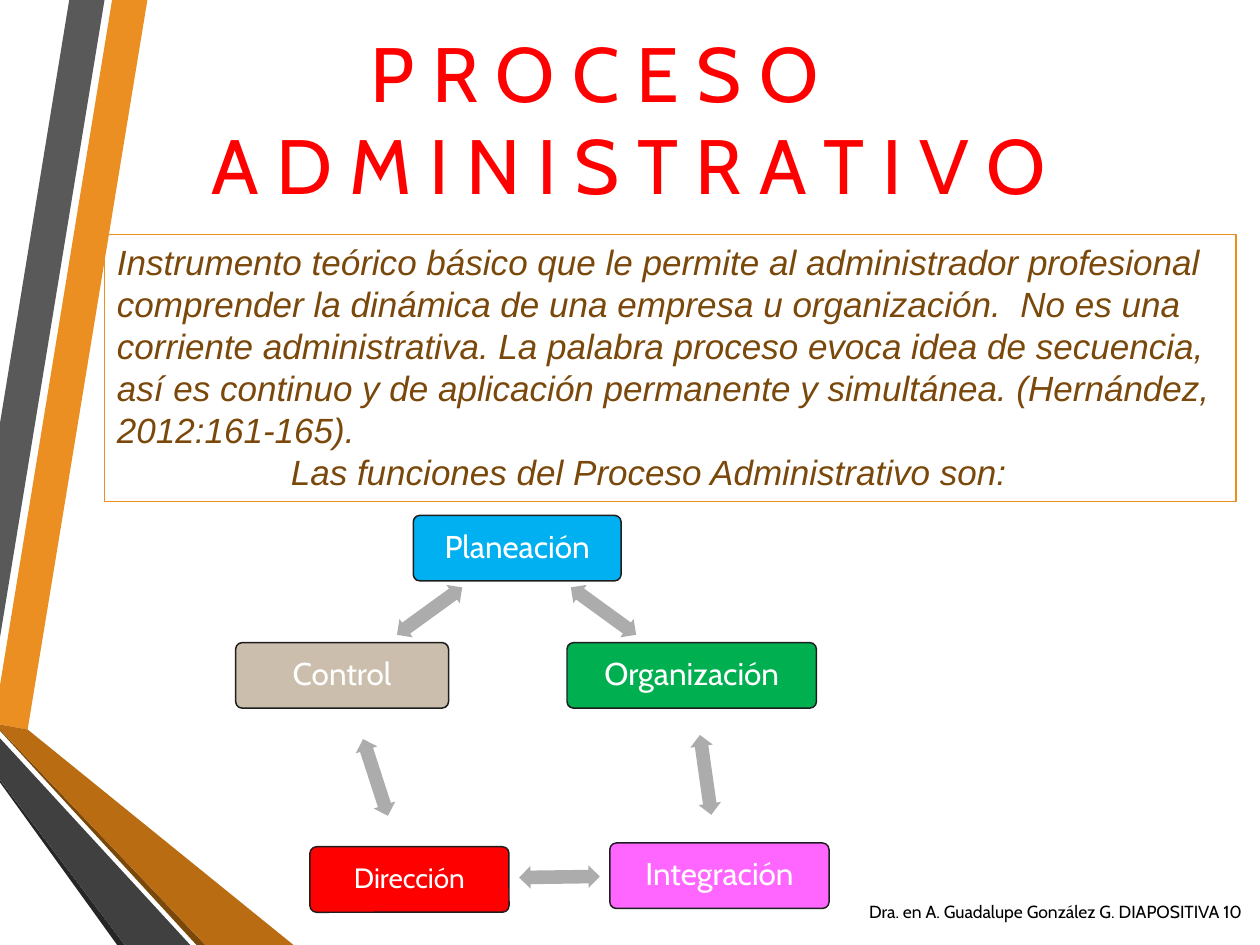
from dataclasses import dataclass

import pptx
import pptx.dml.color
import pptx.enum.shapes
import pptx.enum.text
import pptx.util

Inches = pptx.util.Inches
Pt = pptx.util.Pt
Shape = pptx.enum.shapes.MSO_SHAPE
Align = pptx.enum.text.PP_ALIGN
Anchor = pptx.enum.text.MSO_ANCHOR


@dataclass(frozen=True)
class Theme:
    heading_font: str = "Cabin"
    body_font: str = "Arial"
    title_size: int = 44
    body_size: int = 20
    node_size: int = 18
    small_node_size: int = 16
    footer_size: int = 10
    title: str = "FF0000"
    body: str = "7B480B"
    node_text: str = "FFFFFF"
    footer: str = "000000"
    orange: str = "EB8F22"
    dark_orange: str = "B96C11"
    brown: str = "7B480B"
    gray: str = "595959"
    dark_gray: str = "404040"
    near_black: str = "262626"
    outline: str = "1E1E1E"
    arrow: str = "ACACAC"
    planning: str = "00B0F0"
    organizing: str = "00B050"
    integrating: str = "FF66FF"
    directing: str = "FF0000"
    controlling: str = "CBBEAC"


def rgb(value):
    return pptx.dml.color.RGBColor.from_string(value)


def write(frame, lines, *, font, size, color, italic=False, align=Align.LEFT,
          anchor=Anchor.TOP, indents=(), spacing=None):
    """Fill a text frame, one paragraph a line; indents are left margins in inches."""
    frame.word_wrap = True
    frame.vertical_anchor = anchor
    for index, line in enumerate(lines):
        para = frame.add_paragraph() if index else frame.paragraphs[0]
        para.alignment = align
        if spacing:
            para.line_spacing = spacing
        if indents and indents[index]:
            para._p.get_or_add_pPr().set("marL", str(Inches(indents[index])))
        span = para.add_run()
        span.text = line
        span.font.name = font
        span.font.size = Pt(size)
        span.font.italic = italic
        span.font.color.rgb = rgb(color)


class SlideBuilder:
    def __init__(self, page, theme):
        self.page = page
        self.theme = theme

    def paint(self, shape, fill=None, line=None, width=0.75):
        shape.shadow.inherit = False
        if fill:
            shape.fill.solid()
            shape.fill.fore_color.rgb = rgb(fill)
        else:
            shape.fill.background()
        if line:
            shape.line.color.rgb = rgb(line)
            shape.line.width = Pt(width)
        else:
            shape.line.fill.background()

    def shape(self, kind, bounds, **paint):
        shape = self.page.shapes.add_shape(kind, *map(Inches, bounds))
        self.paint(shape, **paint)
        return shape

    def band(self, points, fill):
        start, *rest = [(Inches(x), Inches(y)) for x, y in points]
        builder = self.page.shapes.build_freeform(*start)
        builder.add_line_segments(rest, close=True)
        self.paint(builder.convert_to_shape(), fill=fill)

    def text(self, bounds, lines, **style):
        box = self.page.shapes.add_textbox(*map(Inches, bounds))
        write(box.text_frame, lines, **style)

    def panel(self, bounds, lines, **style):
        panel = self.shape(Shape.RECTANGLE, bounds, line=self.theme.orange)
        write(panel.text_frame, lines, **style)

    def node(self, label, left, top, width, fill, size):
        node = self.shape(Shape.ROUNDED_RECTANGLE, (left, top, width, 0.52),
                          fill=fill, line=self.theme.outline, width=0.85)
        node.adjustments[0] = 0.1
        frame = node.text_frame
        frame.margin_left = frame.margin_right = Inches(0.07)
        frame.margin_top = frame.margin_bottom = Inches(0.07)
        write(frame, [label], font=self.theme.heading_font, size=size,
              color=self.theme.node_text, align=Align.CENTER,
              anchor=Anchor.MIDDLE, spacing=0.9)

    def double_arrow(self, left, top, angle):
        arrow = self.shape(Shape.LEFT_RIGHT_ARROW, (left, top, 0.64, 0.18),
                           fill=self.theme.arrow)
        arrow.adjustments[0] = 0.6
        arrow.adjustments[1] = 0.5
        arrow.rotation = angle


def main():
    deck = pptx.Presentation()
    deck.slide_width, deck.slide_height = Inches(10), Inches(7.5)
    theme = Theme()
    slide = SlideBuilder(deck.slides.add_slide(deck.slide_layouts[6]), theme)

    bands = [
        (theme.orange, [(0, 5.44), (0, 5.75), (0.22, 5.79), (1.17, 0), (0.89, 0)]),
        (theme.gray, [(0.83, 0), (0.55, 0), (0, 3.36), (0, 5.06)]),
        (theme.near_black, [(0, 6.19), (0, 6.21), (0.93, 7.5), (0.99, 7.5)]),
        (theme.brown, [(0, 5.79), (0, 5.8), (1.56, 7.5), (1.63, 7.5)]),
        (theme.dark_orange, [(0, 5.79), (1.63, 7.5), (2.33, 7.5), (0.22, 5.79), (0, 5.75)]),
        (theme.dark_gray, [(0, 6.19), (0.99, 7.5), (1.51, 7.5), (0, 5.86)]),
    ]
    for fill, points in bands:
        slide.band(points, fill)

    slide.text((0.28, 0.21, 8.88, 1.45),
               ["P R O C E S O", "A D M I N I S T R A T I V O"],
               font=theme.heading_font, size=theme.title_size, color=theme.title,
               align=Align.CENTER, anchor=Anchor.MIDDLE, indents=(0, 0.54))

    slide.panel((0.83, 1.86, 8.98, 2.12), [
        "Instrumento teórico básico que le permite al administrador profesional "
        "comprender la dinámica de una empresa u organización.  No es una "
        "corriente administrativa. La palabra proceso evoca idea de secuencia, "
        "así es continuo y de aplicación permanente y simultánea. (Hernández, "
        "2012:161-165).",
        "Las funciones del Proceso Administrativo son:",
    ], font=theme.body_font, size=theme.body_size, color=theme.body,
        italic=True, indents=(0, 1.38))

    nodes = [
        ("Planeación", 3.28, 4.09, 1.65, theme.planning, theme.node_size),
        ("Organización", 4.5, 5.1, 1.98, theme.organizing, theme.node_size),
        ("Integración", 4.84, 6.69, 1.74, theme.integrating, theme.node_size),
        ("Dirección", 2.46, 6.72, 1.58, theme.directing, theme.small_node_size),
        ("Control", 1.87, 5.1, 1.69, theme.controlling, theme.node_size),
    ]
    arrows = [(4.47, 4.76, 36), (5.28, 6.06, 81.9), (4.12, 6.87, 179.2),
              (2.66, 6.08, 252), (3.09, 4.76, 324)]
    for node, arrow in zip(nodes, arrows):
        slide.node(*node)
        slide.double_arrow(*arrow)

    slide.text((6.8, 6.97, 3.17, 0.52),
               ["Dra. en A. Guadalupe González G. DIAPOSITIVA 10"],
               font=theme.heading_font, size=theme.footer_size,
               color=theme.footer, anchor=Anchor.MIDDLE)

    deck.save("out.pptx")


if __name__ == "__main__":
    main()
